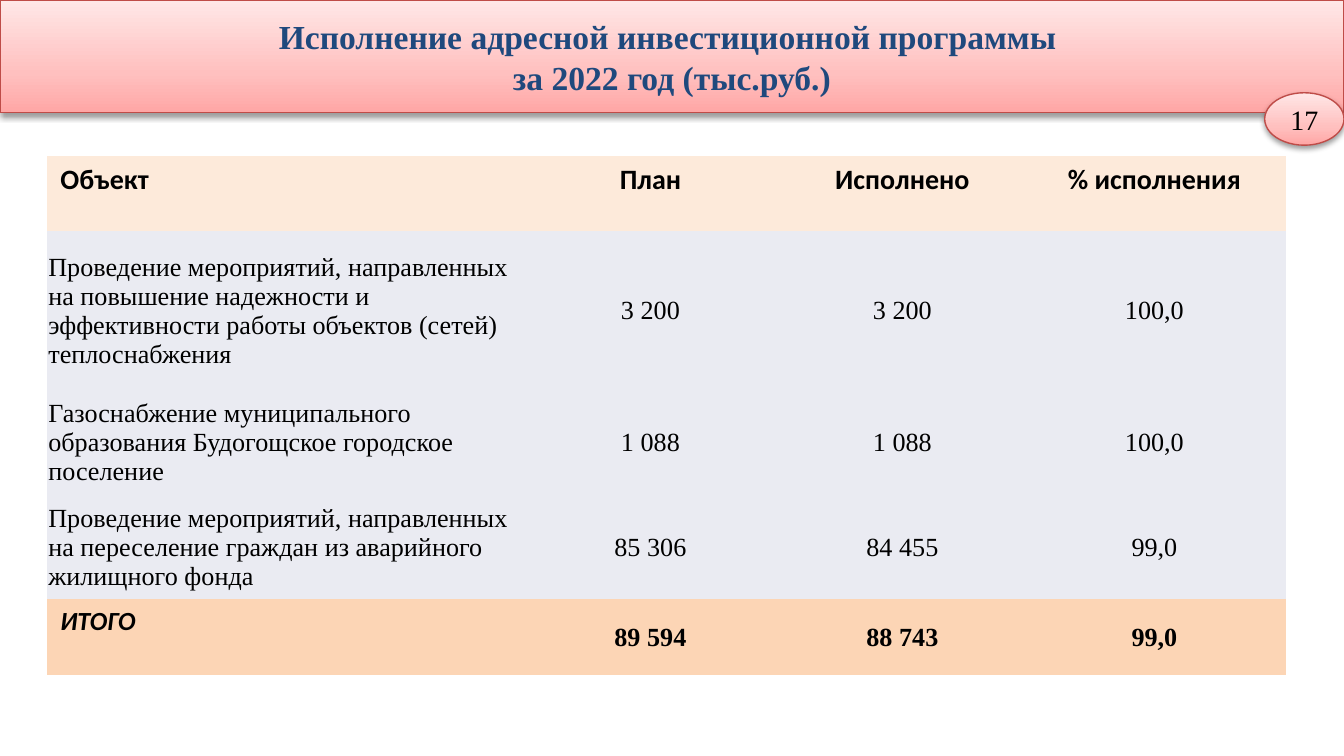
from lxml.etree import SubElement
from pptx import Presentation
from pptx.dml.color import RGBColor
from pptx.enum.shapes import MSO_SHAPE
from pptx.enum.text import MSO_ANCHOR, PP_ALIGN
from pptx.oxml.ns import qn
from pptx.util import Inches, Pt

SERIF, SANS = "Times New Roman", "Calibri"
BLACK, NAVY, RED = "000000", "1F497D", "BF4C48"
HEADER_FILL, BODY_FILL, TOTAL_FILL = "FDEADA", "EAEBF2", "FCD5B5"
GRADIENT = [(0, "FFA6A5"), (35, "FFC0BF"), (100, "FFE7E7")]
NO_STYLE = "{2D5ABB26-0587-4C30-8999-92F81FD0307C}"

TITLE = "Исполнение адресной инвестиционной программы \vза 2022 год (тыс.руб.)"
PAGE_NUMBER = "17"
ROWS = [
    ("Объект", "План", "Исполнено", "% исполнения"),
    ("Проведение мероприятий, направленных на повышение надежности и "
     "эффективности работы объектов (сетей) теплоснабжения",
     "3 200", "3 200", "100,0"),
    ("Газоснабжение муниципального образования Будогощское городское поселение",
     "1 088", "1 088", "100,0"),
    ("Проведение мероприятий, направленных на переселение граждан "
     "из аварийного жилищного фонда",
     "85 306", "84 455", "99,0"),
    ("ИТОГО", "89 594", "88 743", "99,0"),
]
COLUMN_WIDTHS = [3.51, 1.96, 1.79, 1.96]
ROW_HEIGHTS = [0.56, 1.18, 0.78, 0.78, 0.56]


def rgb(value):
    return RGBColor.from_string(value)


def write(text_frame, text, size, name, color=BLACK, bold=False, italic=False,
          align=PP_ALIGN.CENTER):
    text_frame.text = text
    paragraph = text_frame.paragraphs[0]
    paragraph.alignment = align
    for run in paragraph.runs:
        font = run.font
        font.size, font.name = Pt(size), name
        font.bold, font.italic = bold, italic
        font.color.rgb = rgb(color)


def add_color(parent, color, alpha=None):
    element = SubElement(parent, qn("a:srgbClr"), val=color)
    if alpha is not None:
        SubElement(element, qn("a:alpha"), val=str(alpha * 1000))


def add_glossy_shape(slide, kind, left, top, width, height):
    """Add a pink gradient shape with a red outline and a soft shadow below."""
    shape = slide.shapes.add_shape(
        kind, Inches(left), Inches(top), Inches(width), Inches(height))
    shape.fill.gradient()
    shape.fill.gradient_angle = 90
    properties = shape._element.spPr
    stops = properties.find(qn("a:gradFill")).find(qn("a:gsLst"))
    for stop in list(stops):
        stops.remove(stop)
    for position, color in GRADIENT:
        add_color(SubElement(stops, qn("a:gs"), pos=str(position * 1000)), color)
    shape.line.color.rgb = rgb(RED)
    shape.line.width = Pt(0.75)
    shape.shadow.inherit = False
    shadow = SubElement(
        properties.find(qn("a:effectLst")), qn("a:outerShdw"),
        blurRad=str(Pt(3.1)), dist=str(Pt(1.6)), dir=str(90 * 60000), rotWithShape="0")
    add_color(shadow, BLACK, 38)
    shape.text_frame.word_wrap = True
    shape.text_frame.vertical_anchor = MSO_ANCHOR.MIDDLE
    return shape


def fill_cell(cell, text, row, column):
    is_header, is_total = row == 0, row == len(ROWS) - 1
    is_label = column == 0
    is_sans = is_header or (is_total and is_label)
    cell.fill.solid()
    cell.fill.fore_color.rgb = rgb(
        HEADER_FILL if is_header else TOTAL_FILL if is_total else BODY_FILL)
    if not is_sans:
        cell.vertical_anchor = MSO_ANCHOR.MIDDLE
        cell.margin_left = cell.margin_right = cell.margin_top = Inches(0.01)
        cell.margin_bottom = 0
    write(cell.text_frame, text, 15 if is_header else 14, SANS if is_sans else SERIF,
          bold=is_header or is_total, italic=is_total and is_label,
          align=PP_ALIGN.LEFT if is_label else PP_ALIGN.CENTER)


def add_budget_table(slide):
    frame = slide.shapes.add_table(
        len(ROWS), len(COLUMN_WIDTHS), Inches(0.35), Inches(1.16),
        Inches(sum(COLUMN_WIDTHS)), Inches(sum(ROW_HEIGHTS)))
    table = frame.table
    table._tbl.tblPr.find(qn("a:tableStyleId")).text = NO_STYLE
    table.horz_banding = False
    for column, width in zip(table.columns, COLUMN_WIDTHS):
        column.width = Inches(width)
    for row, height in zip(table.rows, ROW_HEIGHTS):
        row.height = Inches(height)
    for row, texts in enumerate(ROWS):
        for column, text in enumerate(texts):
            fill_cell(table.cell(row, column), text, row, column)


def main():
    presentation = Presentation()
    presentation.slide_width = Inches(10)
    presentation.slide_height = Inches(10) * 9 // 16
    slide = presentation.slides.add_slide(presentation.slide_layouts[6])

    banner = add_glossy_shape(slide, MSO_SHAPE.RECTANGLE, 0, 0, 10, 0.84)
    write(banner.text_frame, TITLE, 18, SERIF, NAVY, bold=True)
    add_budget_table(slide)
    badge = add_glossy_shape(slide, MSO_SHAPE.OVAL, 9.41, 0.69, 0.59, 0.39)
    write(badge.text_frame, PAGE_NUMBER, 15, SERIF)

    presentation.save("out.pptx")


if __name__ == "__main__":
    main()
